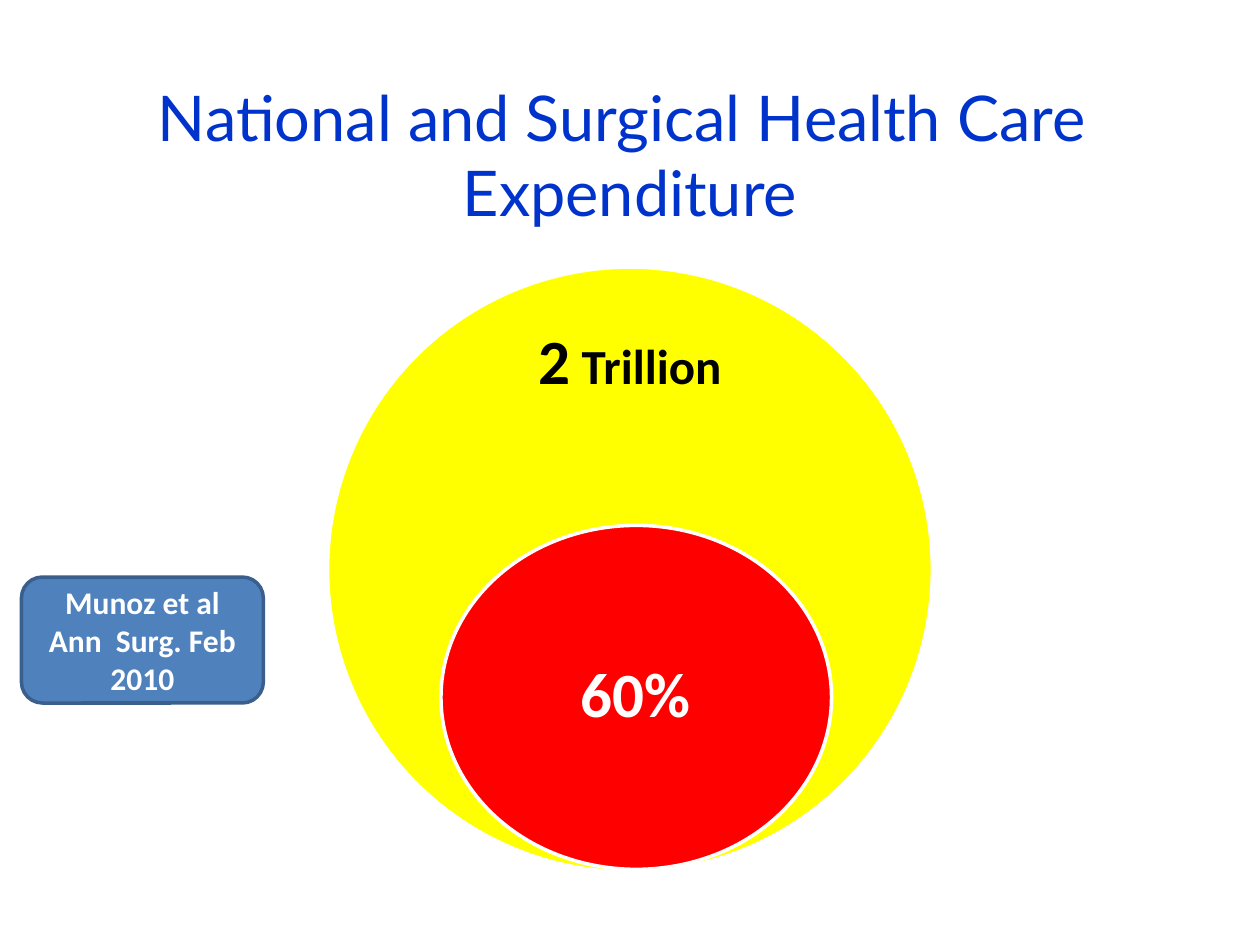
from pptx import Presentation
from pptx.dml.color import RGBColor
from pptx.enum.shapes import MSO_SHAPE
from pptx.enum.text import MSO_ANCHOR, PP_ALIGN
from pptx.util import Inches, Pt

WHITE = RGBColor(0xFF, 0xFF, 0xFF)
BLACK = RGBColor(0x00, 0x00, 0x00)
TITLE_BLUE = RGBColor(0x00, 0x33, 0xCC)
YELLOW = RGBColor(0xFF, 0xFF, 0x00)
RED = RGBColor(0xFF, 0x00, 0x00)
BOX_BLUE = RGBColor(0x4F, 0x81, 0xBD)
BOX_EDGE = RGBColor(0x3A, 0x5F, 0x8C)

prs = Presentation()
prs.slide_width, prs.slide_height = Inches(10), Inches(7.5)
slide = prs.slides.add_slide(prs.slide_layouts[6])


def add_outlined(kind, box, fill, edge):
    shape = slide.shapes.add_shape(kind, *map(Inches, box))
    shape.shadow.inherit = False
    shape.fill.solid()
    shape.fill.fore_color.rgb = fill
    shape.line.color.rgb = edge
    shape.line.width = Pt(2)
    return shape


def write_centred(shape, runs, font, color, bold=True):
    frame = shape.text_frame
    frame.word_wrap = True
    frame.vertical_anchor = MSO_ANCHOR.MIDDLE
    paragraph = frame.paragraphs[0]
    paragraph.alignment = PP_ALIGN.CENTER
    for text, size in runs:
        run = paragraph.add_run()
        run.text = text
        run.font.name = font
        run.font.size = Pt(size)
        run.font.bold = bold
        run.font.color.rgb = color
    return frame


# Title
title = slide.shapes.add_textbox(Inches(0.5), Inches(0.42), Inches(9), Inches(1.6))
write_centred(title, [("National and Surgical Health Care  Expenditure", 36)],
              "Lato", TITLE_BLUE, bold=False)

# Nested circles: national spending, and the surgical share inside it
circles = [
    ((2.6, 2.12, 4.8, 4.8), YELLOW, (3.74, 2.48, 2.52, 0.82),
     [("2", 36), (" Trillion", 28)], BLACK),
    ((3.5, 4.17, 3.1, 2.73), RED, (3.95, 4.85, 2.19, 1.37),
     [("60%", 36)], WHITE),
]
for circle_box, fill, label_box, runs, color in circles:
    add_outlined(MSO_SHAPE.OVAL, circle_box, fill, WHITE)
    label = slide.shapes.add_textbox(*map(Inches, label_box))
    frame = write_centred(label, runs, "Calibri", color)
    frame.margin_left = frame.margin_right = Inches(0.28)
    frame.margin_top = frame.margin_bottom = Inches(0.28)
    frame.paragraphs[0].line_spacing = 0.9

# Citation
citation = add_outlined(MSO_SHAPE.ROUNDED_RECTANGLE, (0.17, 4.58, 1.92, 1),
                        BOX_BLUE, BOX_EDGE)
write_centred(citation, [("Munoz et al Ann  Surg. Feb 2010", 18)], "Calibri", WHITE)

prs.save("out.pptx")
